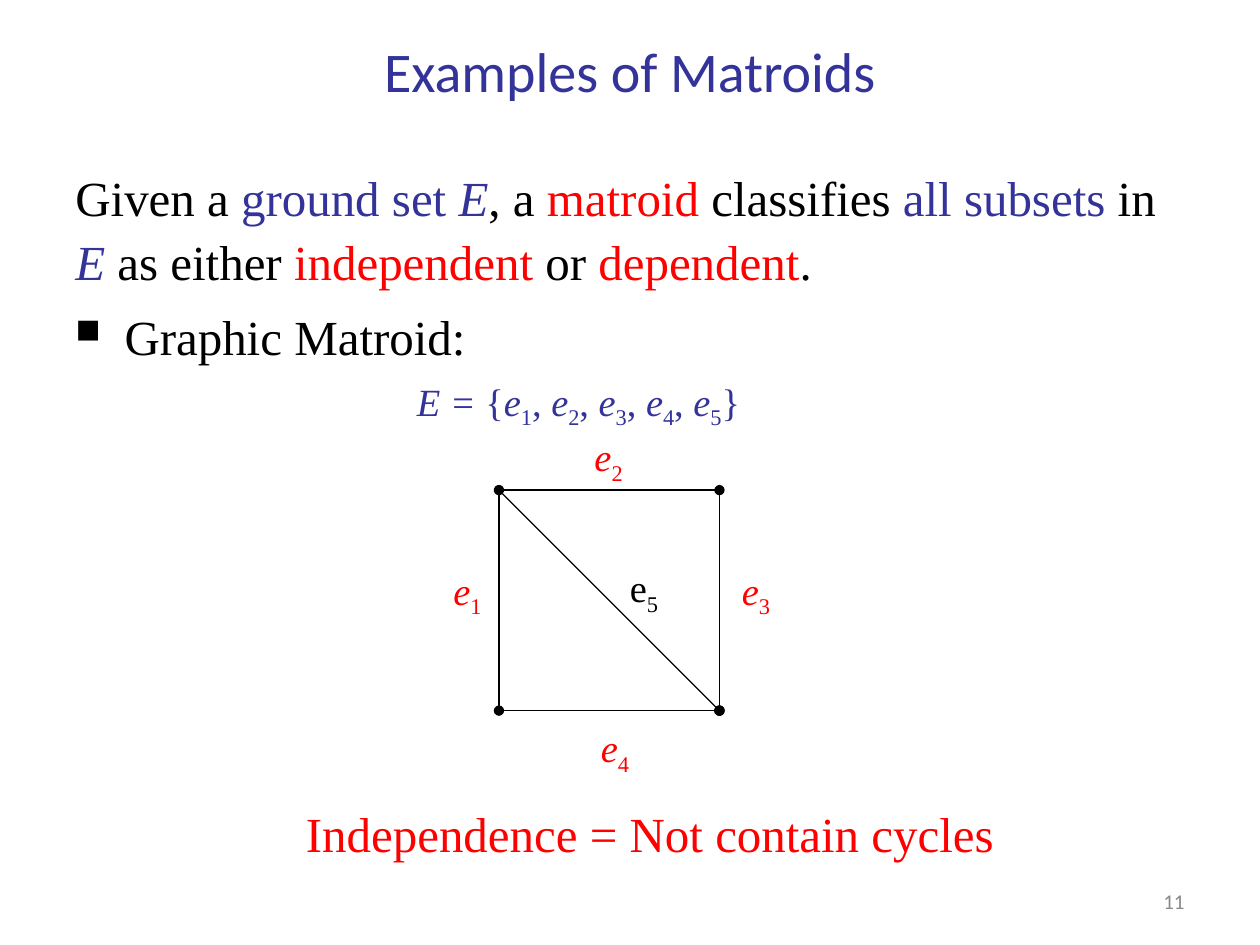
"""Build the slide on graphic matroids."""
from lxml import etree
from pptx import Presentation
from pptx.dml.color import RGBColor
from pptx.enum.shapes import MSO_CONNECTOR
from pptx.enum.text import MSO_ANCHOR, PP_ALIGN
from pptx.oxml.ns import qn
from pptx.util import Inches, Pt

LINE = MSO_CONNECTOR.STRAIGHT
MIDDLE = MSO_ANCHOR.MIDDLE
LEFT, CENTER, RIGHT = PP_ALIGN.LEFT, PP_ALIGN.CENTER, PP_ALIGN.RIGHT
BLACK = RGBColor(0, 0, 0)
BLUE = RGBColor(0x33, 0x33, 0x99)
RED = RGBColor(0xFF, 0, 0)
GRAY = RGBColor(0x89, 0x89, 0x89)
SERIF, SANS = "Times New Roman", "Calibri"

TITLE = "Examples of Matroids"
INTRO = [
    ("Given a", BLACK, ""), (" ground set ", BLUE, ""), ("E", BLUE, "i"),
    (", a ", BLACK, ""), ("matroid ", RED, ""), ("classifies ", BLACK, ""),
    ("all subsets ", BLUE, ""), ("in ", BLACK, ""), ("E ", BLUE, "i"),
    ("as either", BLACK, ""), (" independent ", RED, ""), ("or ", BLACK, ""),
    ("dependent", RED, ""), (".", BLACK, ""),
]
POINT = [("Graphic Matroid:", BLACK, "")]
CLAIM = [("Independence = Not contain cycles", RED, "")]
NUMBER = [("11", GRAY, "")]

X1, Y1, SIDE = 3.96, 3.89, 1.75
X2, Y2 = X1 + SIDE, Y1 + SIDE
EDGES = [
    (X1, Y1, X1, Y2, False),
    (X1, Y1, X2, Y1, False),
    (X2, Y1, X2, Y2, True),
    (X1, Y2, X2, Y2, True),
    (X1, Y1, X2, Y2, True),
]
LABELS = [
    ("1", 3.5, 4.45, 0.46, RED, "i"),
    ("2", 4.62, 3.39, 0.5, RED, "i"),
    ("3", 5.79, 4.45, 0.54, RED, "i"),
    ("4", 4.67, 5.7, 0.62, RED, "i"),
    ("5", 4.9, 4.43, 0.5, BLACK, ""),
]


def edge_name(digit, color, style="i"):
    return [("e", color, style), (digit, color, "sub")]


def ground_set():
    runs = [("E = ", BLUE, "i"), ("{", BLUE, "")]
    for digit in "12345":
        runs += edge_name(digit, BLUE)
        runs.append(("}" if digit == "5" else ", ", BLUE, ""))
    return runs


def set_font(font, size, name, color=None):
    font.size, font.name = Pt(size), name
    if color is not None:
        font.color.rgb = color


def fill_para(para, runs, size, name=SERIF, align=LEFT):
    para.alignment = align
    colors = {color for _, color, _ in runs}
    set_font(para.font, size, name, runs[0][1] if len(colors) == 1 else None)
    for text, color, style in runs:
        run = para.add_run()
        run.text = text
        if len(colors) > 1:
            run.font.color.rgb = color
        if style == "i":
            run.font.italic = True
        elif style == "sub":
            run.font._element.set("baseline", "-25000")


def add_text(slide, box, runs, size, name=SERIF, align=LEFT):
    frame = slide.shapes.add_textbox(*map(Inches, box)).text_frame
    frame.word_wrap = True
    fill_para(frame.paragraphs[0], runs, size, name, align)
    return frame


def add_bullet(para):
    props = para._p.get_or_add_pPr()
    props.set("marL", str(Inches(0.39)))
    props.set("indent", str(-Inches(0.39)))
    size = etree.Element(qn("a:buSzPct"), val="70000")
    mark = etree.Element(qn("a:buChar"), char="■")
    spot = props.index(props.find(qn("a:defRPr")))
    props[spot:spot] = [size, mark]


def add_edge(slide, x1, y1, x2, y2, dots):
    edge = slide.shapes.add_connector(LINE, *map(Inches, (x1, y1, x2, y2)))
    edge.line.color.rgb = BLACK
    edge.line.width = Pt(0.75)
    props = edge._element.spPr
    if dots:
        for end in ("a:headEnd", "a:tailEnd"):
            etree.SubElement(props.find(qn("a:ln")), qn(end), type="oval")
    etree.SubElement(props, qn("a:effectLst"))


def main():
    deck = Presentation()
    deck.slide_width, deck.slide_height = Inches(10), Inches(7.5)
    slide = deck.slides.add_slide(deck.slide_layouts[5])

    title = slide.shapes.title
    title.left, title.top = Inches(0.5), Inches(0.13)
    title.width, title.height = Inches(9), Inches(0.85)
    title.text_frame.vertical_anchor = MIDDLE
    fill_para(title.text_frame.paragraphs[0], [(TITLE, BLUE, "")], 32, SANS, CENTER)

    body = add_text(slide, (0.5, 1.23, 9, 1.75), INTRO, 28)
    point = body.add_paragraph()
    fill_para(point, POINT, 28)
    for para in body.paragraphs:
        para.line_spacing = 1.1
        para.space_before = Pt(5.6)
    add_bullet(point)

    for edge in EDGES:
        add_edge(slide, *edge)
    for digit, left, top, width, color, style in LABELS:
        add_text(slide, (left, top, width, 0.47), edge_name(digit, color, style), 22)

    add_text(slide, (3.21, 2.95, 2.88, 0.47), ground_set(), 22)
    number = add_text(slide, (7.28, 6.95, 2.22, 0.4), NUMBER, 12, SANS, RIGHT)
    number.vertical_anchor = MIDDLE
    add_text(slide, (2.33, 6.33, 6.29, 0.57), CLAIM, 28)
    deck.save("out.pptx")


if __name__ == "__main__":
    main()
